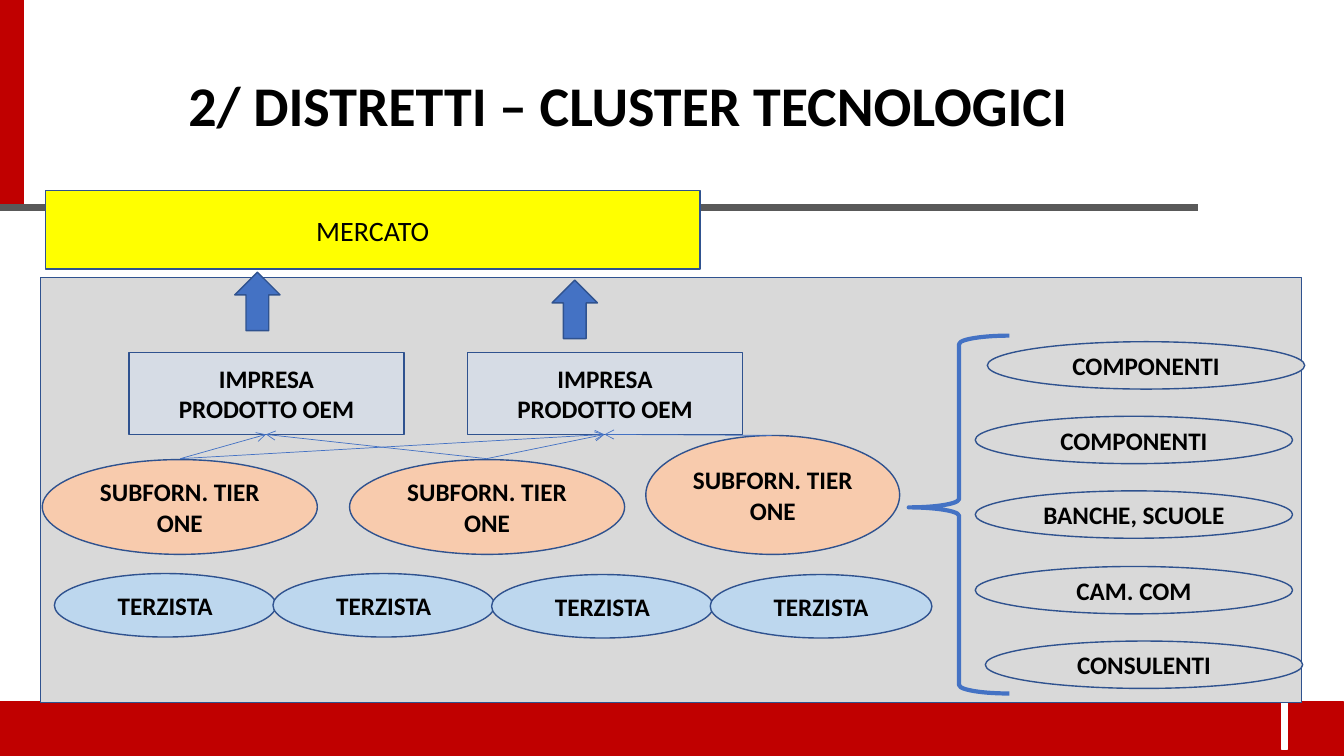
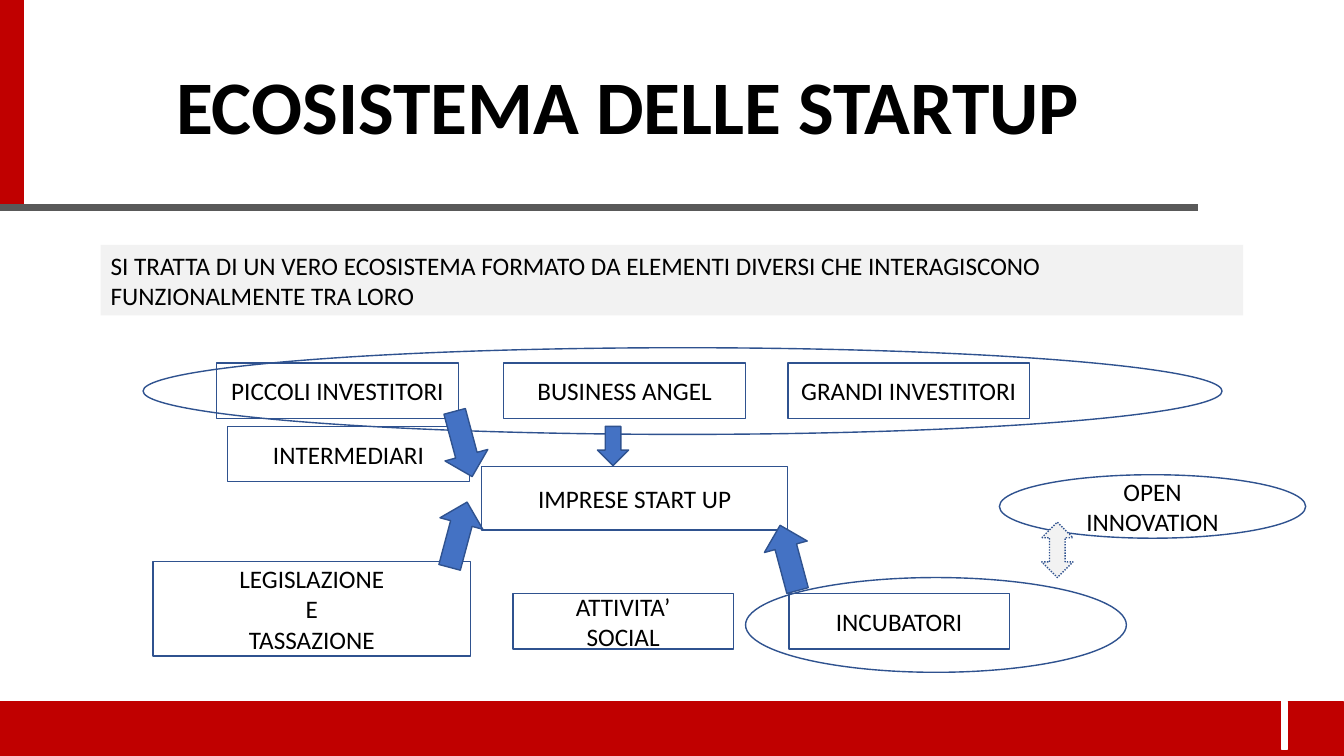
from pptx import Presentation
from pptx.dml.color import RGBColor
from pptx.enum.dml import MSO_LINE
from pptx.enum.shapes import MSO_CONNECTOR, MSO_SHAPE
from pptx.enum.text import MSO_ANCHOR, PP_ALIGN
from pptx.oxml.ns import qn
from pptx.util import Pt
from lxml import etree

PX = 9144
FONT = "Calibri"
RECT, OVAL = MSO_SHAPE.RECTANGLE, MSO_SHAPE.OVAL
UP, DOWN, UP_DOWN = MSO_SHAPE.UP_ARROW, MSO_SHAPE.DOWN_ARROW, MSO_SHAPE.UP_DOWN_ARROW
BRACE = MSO_SHAPE.LEFT_BRACE
STRAIGHT = MSO_CONNECTOR.STRAIGHT
MIDDLE, TOP = MSO_ANCHOR.MIDDLE, MSO_ANCHOR.TOP
LEFT, CENTER = PP_ALIGN.LEFT, PP_ALIGN.CENTER
DOTTED = MSO_LINE.ROUND_DOT

COLORS = {
    "text": "000000", "red": "C00000", "white": "FFFFFF", "rule": "595959",
    "outline": "2F528F", "accent": "4472C4", "panel": "D9D9D9",
    "market": "FFFF00", "firm": "D6DCE5", "supplier": "F8CBAD",
    "contractor": "BDD7EE", "note": "F2F2F2",
}


def rgb(name):
    return RGBColor.from_string(COLORS[name])


def emu(*lengths):
    return [n * PX for n in lengths]


def write(sp, text, size, bold=False, align=CENTER, anchor=MIDDLE, indent=10):
    tf = sp.text_frame
    tf.word_wrap = True
    tf.vertical_anchor = anchor
    tf.margin_left, tf.margin_right, tf.margin_top, tf.margin_bottom = emu(indent, 10, 5, 5)
    for i, line in enumerate(text.split("\n")):
        p = tf.add_paragraph() if i else tf.paragraphs[0]
        p.alignment = align
        r = p.add_run()
        r.text = line
        r.font.name = FONT
        r.font.size = Pt(size)
        r.font.bold = bold
        r.font.color.rgb = rgb("text")


def add_shape(slide, kind, box, fill=None, line="outline", width=1, rotation=0):
    sp = slide.shapes.add_shape(kind, *emu(*box))
    sp.shadow.inherit = False
    sp.rotation = rotation
    if fill:
        sp.fill.solid()
        sp.fill.fore_color.rgb = rgb(fill)
    else:
        sp.fill.background()
    if line:
        sp.line.color.rgb = rgb(line)
        sp.line.width = Pt(width)
    else:
        sp.line.fill.background()
    return sp


def add_label(slide, kind, box, text, fill=None, size=18, bold=False):
    write(add_shape(slide, kind, box, fill), text, size, bold)


def add_line(slide, start, end, color, width, arrow=False):
    cn = slide.shapes.add_connector(STRAIGHT, *emu(*start, *end))
    cn.line.color.rgb = rgb(color)
    cn.line.width = Pt(width)
    if arrow:
        etree.SubElement(cn.line._get_or_add_ln(), qn("a:tailEnd"), type="arrow")
    etree.SubElement(cn._element.spPr, qn("a:effectLst"))


def add_base(prs):
    slide = prs.slides.add_slide(prs.slide_layouts[6])
    add_shape(slide, RECT, (0, 696, 1333, 54), "red", "red")
    add_shape(slide, RECT, (1272, 696, 6, 47), "white", "white")
    add_line(slide, (12, 0), (12, 206), "red", 17.25)
    add_line(slide, (0, 206), (1189, 206), "rule", 5.5)
    return slide


def add_title(slide, text, size, indent=10):
    sp = slide.shapes.add_textbox(*emu(165, 0, 1168, 206))
    write(sp, text, size, bold=True, align=LEFT, indent=indent)


def build_clusters(prs):
    slide = add_base(prs)
    add_shape(slide, RECT, (40, 275, 1252, 422), "panel")
    add_title(slide, "2/ DISTRETTI – CLUSTER TECNOLOGICI", 40, indent=22)

    for x in (128, 464):
        add_label(slide, RECT, (x, 350, 273, 81), "IMPRESA\nPRODOTTO OEM", "firm", bold=True)
    for box in ((42, 456, 273, 94), (347, 456, 273, 94), (641, 432, 252, 118)):
        add_label(slide, OVAL, box, "SUBFORN. TIER ONE", "supplier", bold=True)

    firm_1, firm_2 = (264, 431), (600, 431)
    supplier_1, supplier_2, supplier_3 = (179, 455), (483, 455), (766, 432)
    links = ((supplier_1, firm_1), (supplier_1, firm_2), (supplier_2, firm_2),
             (supplier_2, firm_1), (supplier_3, firm_2))
    for start, end in links:
        add_line(slide, start, end, "accent", 0.5, arrow=True)

    for i in range(4):
        box = (54 + 217 * i, 569 + i // 2, 220, 63)
        add_label(slide, OVAL, box, "TERZISTA", "contractor", bold=True)

    services = (("COMPONENTI", 980), ("COMPONENTI", 968), ("BANCHE, SCUOLE", 968),
                ("CAM. COM", 968), ("CONSULENTI", 978))
    for i, (text, x) in enumerate(services):
        box = (x, 339 + round(74.25 * i), 315, 47)
        add_label(slide, OVAL, box, text, "panel", bold=True)

    add_label(slide, RECT, (45, 189, 650, 78), "MERCATO", "market", size=20)
    brace = add_shape(slide, BRACE, (902, 333, 100, 355), line="accent", width=3)
    brace.adjustments[1] = 0.48
    for x, y in ((233, 270), (548, 278)):
        add_shape(slide, UP, (x, y, 45, 58), "accent")


def build_ecosystem(prs):
    slide = add_base(prs)
    add_title(slide, "ECOSISTEMA DELLE STARTUP", 54)
    note = add_shape(slide, RECT, (100, 243, 1134, 70), "note", line=None)
    write(note, "SI TRATTA DI UN VERO ECOSISTEMA FORMATO DA ELEMENTI DIVERSI "
          "CHE INTERAGISCONO FUNZIONALMENTE TRA LORO", 18, align=LEFT, anchor=TOP)

    for box in ((142, 345, 1071, 86), (740, 573, 378, 94)):
        add_shape(slide, OVAL, box)

    labels = (
        (RECT, (478, 463, 304, 63), "IMPRESE START UP"),
        (RECT, (215, 360, 240, 55), "PICCOLI INVESTITORI"),
        (RECT, (500, 360, 240, 55), "BUSINESS ANGEL"),
        (RECT, (782, 360, 240, 55), "GRANDI INVESTITORI"),
        (RECT, (226, 423, 240, 55), "INTERMEDIARI"),
        (RECT, (152, 557, 315, 94), "LEGISLAZIONE\nE\nTASSAZIONE"),
        (RECT, (509, 589, 219, 55), "ATTIVITA’\nSOCIAL"),
        (RECT, (783, 589, 219, 55), "INCUBATORI"),
        (OVAL, (992, 471, 304, 63), "OPEN\nINNOVATION"),
    )
    for kind, box, text in labels:
        add_label(slide, kind, box, text)

    arrows = (
        (DOWN, (593, 423, 31, 39), 0),
        (UP, (761, 520, 44, 67), 345),
        (UP, (433, 497, 44, 67), 15),
        (DOWN, (438, 407, 44, 67), 345),
    )
    for kind, box, rotation in arrows:
        add_shape(slide, kind, box, "accent", rotation=rotation)
    exchange = add_shape(slide, UP_DOWN, (1034, 518, 31, 55), "note")
    exchange.line.dash_style = DOTTED


def main():
    prs = Presentation()
    prs.slide_width, prs.slide_height = emu(1334, 750)
    build_clusters(prs)
    build_ecosystem(prs)
    prs.save("out.pptx")


if __name__ == "__main__":
    main()
